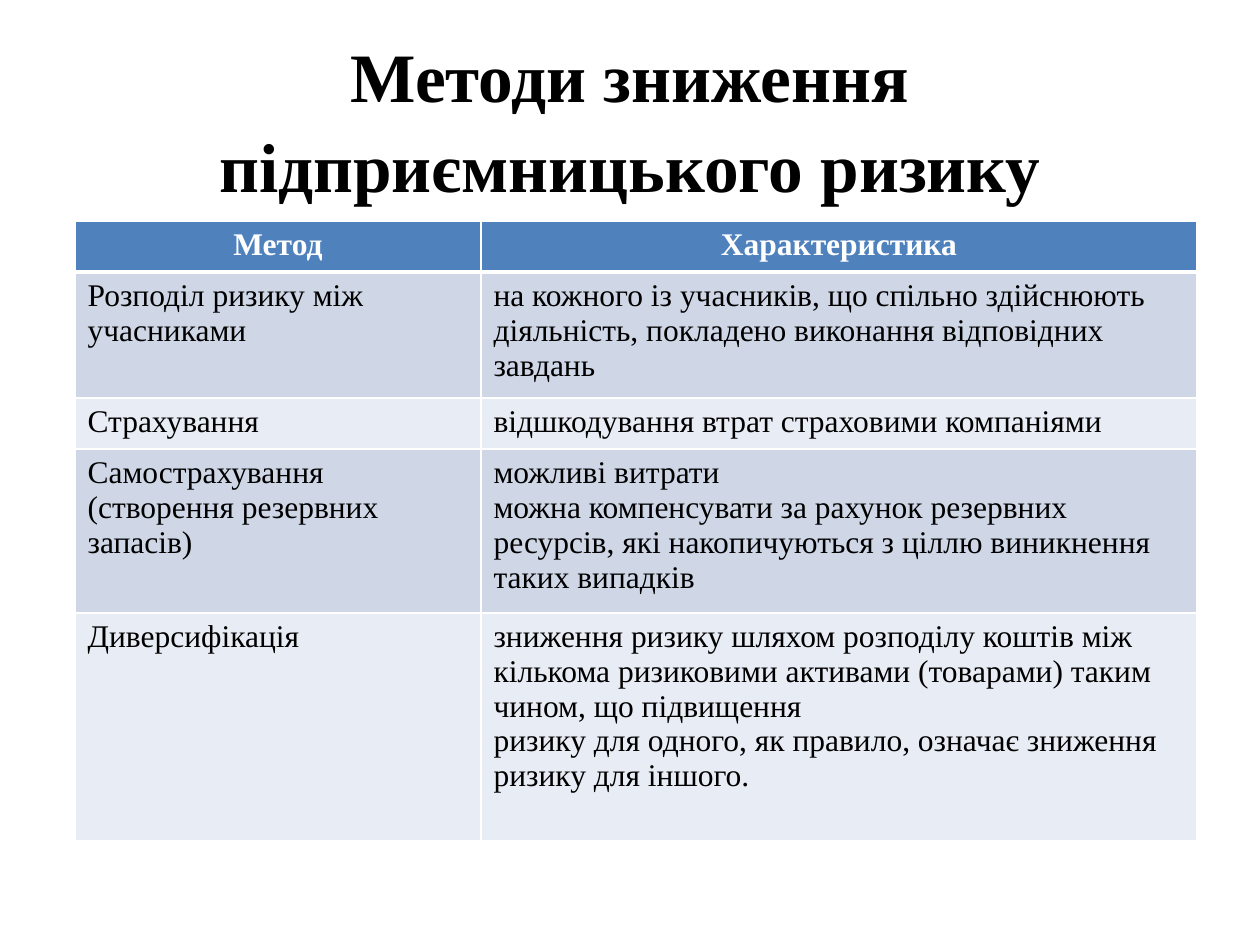
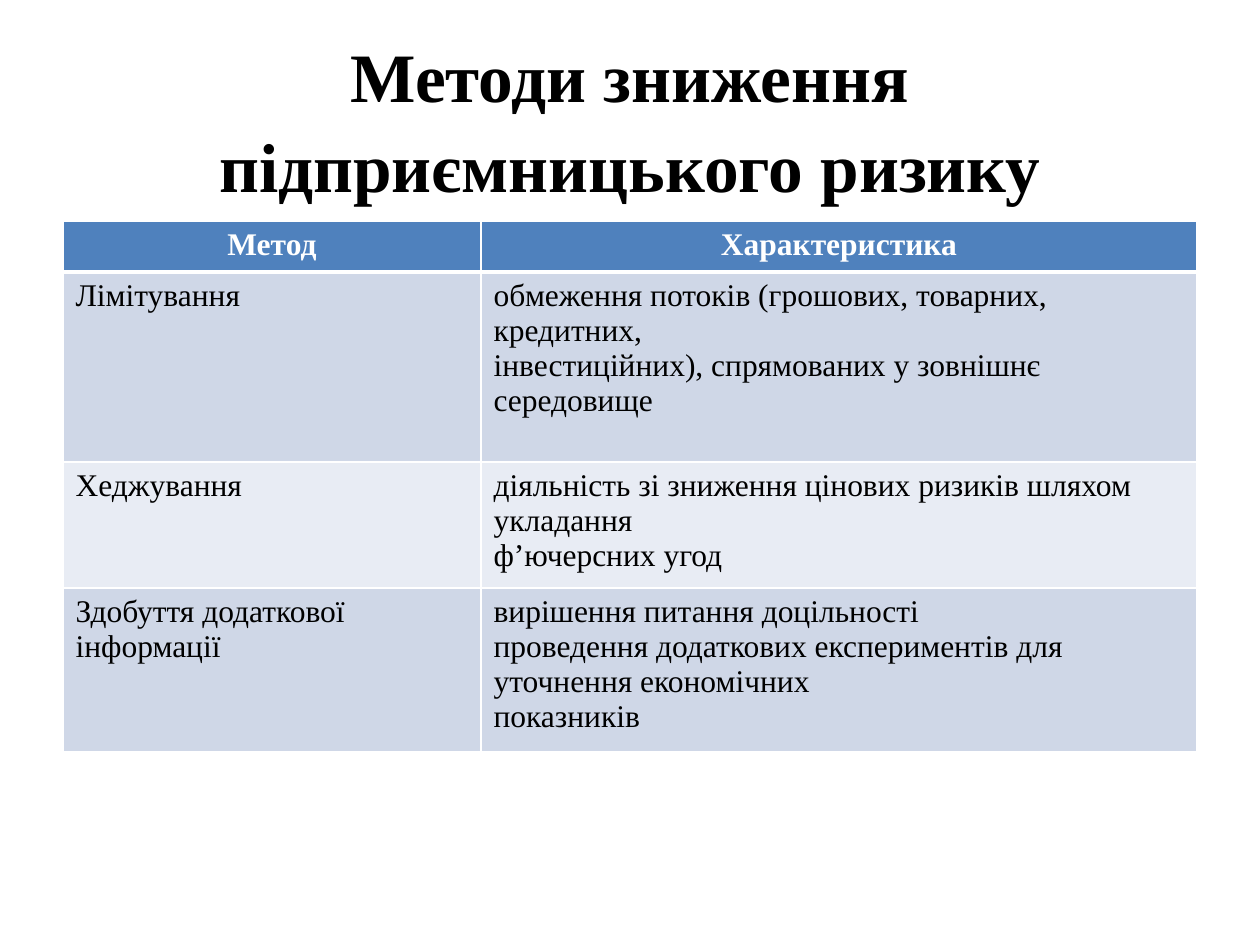
from dataclasses import dataclass

from lxml.etree import SubElement
from pptx import Presentation
from pptx.dml.color import RGBColor
from pptx.enum.text import MSO_ANCHOR as ANCHOR, PP_ALIGN as ALIGN
from pptx.oxml.ns import qn
from pptx.util import Emu, Pt

PX = 914400 / 126
FONT = "Times New Roman"
WHITE, BLACK, BLUE = "FFFFFF", "000000", "4F81BD"
BANDS = ("CFD7E7", "E8ECF4")
TITLE = "Методи зниження підприємницького ризику"
HEADER = ("Метод", "Характеристика")
TABLE_TOP, HEADER_HEIGHT = 221, 51
COLUMN_SPLIT, TRAIT_WIDTH = 481, 716


@dataclass
class Method:
    name: str
    trait: str
    height: int


@dataclass
class MethodSlide:
    name_width: int
    methods: list[Method]


SLIDES = [
    MethodSlide(406, [
        Method("Розподіл ризику між учасниками",
               "на кожного із учасників, що спільно здійснюють діяльність, "
               "покладено виконання відповідних завдань", 117),
        Method("Страхування", "відшкодування втрат страховими компаніями", 51),
        Method("Самострахування (створення резервних запасів)",
               "можливі витрати\n"
               "можна компенсувати за рахунок резервних\n"
               "ресурсів, які накопичуються з ціллю виникнення таких випадків", 152),
        Method("Диверсифікація",
               "зниження ризику шляхом розподілу коштів між\n"
               "кількома ризиковими активами (товарами) таким чином, що підвищення\n"
               "ризику для одного, як правило, означає зниження ризику для іншого.", 228),
    ]),
    MethodSlide(418, [
        Method("Лімітування",
               "обмеження потоків (грошових, товарних, кредитних,\n"
               "інвестиційних), спрямованих у зовнішнє середовище", 190),
        Method("Хеджування",
               "діяльність зі зниження цінових ризиків шляхом укладання\n"
               "ф’ючерсних угод", 118),
        Method("Здобуття додаткової інформації",
               "вирішення питання доцільності\n"
               "проведення додаткових експериментів для уточнення економічних\n"
               "показників", 151),
    ]),
]


def px(n: int) -> Emu:
    return Emu(round(n * PX))


def rgb(color: str) -> RGBColor:
    return RGBColor.from_string(color)


def write(tf, text: str, *, size: float = 18, color: str = BLACK, bold: bool = False,
          align=ALIGN.LEFT, spacing: float = 1.0) -> None:
    """Fill a text frame, one paragraph per line of text."""
    tf.word_wrap = True
    for i, line in enumerate(text.split("\n")):
        p = tf.add_paragraph() if i else tf.paragraphs[0]
        p.alignment, p.line_spacing = align, spacing
        r = p.add_run()
        r.text = line
        r.font.name, r.font.size, r.font.bold = FONT, Pt(size), bold
        r.font.color.rgb = rgb(color)


def add_title(s) -> None:
    sp = s.shapes.add_textbox(px(63), px(38), px(1134), px(157))
    sp.text_frame.vertical_anchor = ANCHOR.MIDDLE
    write(sp.text_frame, TITLE, size=39.6, bold=True, align=ALIGN.CENTER, spacing=1.08)


def set_borders(cell, top: int, bottom: int) -> None:
    tcPr = cell._tc.get_or_add_tcPr()
    for side, width in (("L", 1), ("R", 1), ("T", top), ("B", bottom)):
        ln = SubElement(tcPr, qn(f"a:ln{side}"), w=str(Pt(width)))
        fill = SubElement(ln, qn("a:solidFill"))
        SubElement(fill, qn("a:srgbClr"), val=WHITE)


def add_table(s, spec: MethodSlide) -> None:
    rows = [HEADER] + [(m.name, m.trait) for m in spec.methods]
    heights = [HEADER_HEIGHT] + [m.height for m in spec.methods]
    widths = (spec.name_width, TRAIT_WIDTH)
    table = s.shapes.add_table(
        len(rows), len(widths), px(COLUMN_SPLIT - spec.name_width), px(TABLE_TOP),
        px(sum(widths)), px(sum(heights))).table
    for column, width in zip(table.columns, widths):
        column.width = px(width)
    for i, (texts, height) in enumerate(zip(rows, heights)):
        table.rows[i].height = px(height)
        for j, text in enumerate(texts):
            cell = table.cell(i, j)
            set_borders(cell, top=3 if i == 1 else 1, bottom=3 if i == 0 else 1)
            cell.fill.solid()
            cell.fill.fore_color.rgb = rgb(BANDS[(i - 1) % 2] if i else BLUE)
            if i:
                write(cell.text_frame, text)
            else:
                write(cell.text_frame, text, color=WHITE, bold=True, align=ALIGN.CENTER)


def main() -> None:
    prs = Presentation()
    prs.slide_width, prs.slide_height = px(1260), px(945)
    for spec in SLIDES:
        s = prs.slides.add_slide(prs.slide_layouts[6])
        add_title(s)
        add_table(s, spec)
    prs.save("out.pptx")


if __name__ == "__main__":
    main()
